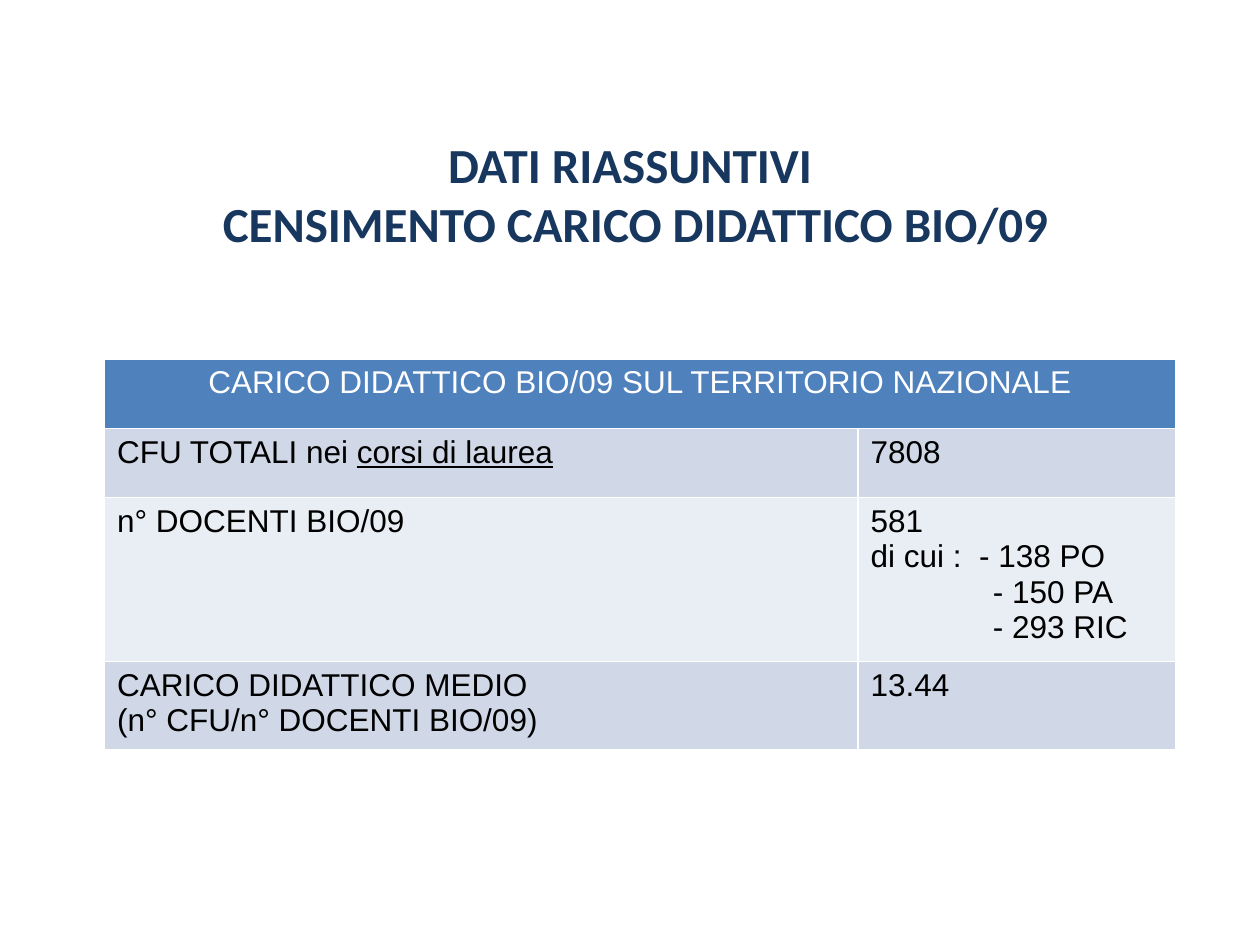
from dataclasses import dataclass

from pptx import Presentation
from pptx.dml.color import RGBColor
from pptx.enum.text import MSO_ANCHOR as Anchor, PP_ALIGN as Align
from pptx.oxml.ns import qn
from pptx.slide import Slide
from pptx.table import _Cell as Cell
from pptx.util import Inches, Pt


@dataclass(frozen=True)
class Theme:
    title_font: str = "Calibri"
    body_font: str = "Arial"
    title_size: int = 28
    body_size: int = 18
    navy: str = "17375E"
    header: str = "4F81BD"
    bands: tuple[str, str] = ("D0D8E8", "E9EDF4")
    white: str = "FFFFFF"
    black: str = "000000"
    border_width: float = 1


@dataclass(frozen=True)
class Run:
    text: str
    underline: bool = False


@dataclass(frozen=True)
class Line:
    runs: tuple[Run, ...]
    indent: float = 0
    align: Align = Align.LEFT


@dataclass(frozen=True)
class Row:
    height: float
    label: tuple[Line, ...]
    value: tuple[Line, ...]


def line(text: str, indent: float = 0, align: Align = Align.LEFT) -> Line:
    return Line((Run(text),), indent, align)


THEME = Theme()
COLUMN_WIDTHS = (5.98, 2.52)
HEADER_HEIGHT = 0.55
RANK_INDENT = 0.97

TITLE = ("DATI RIASSUNTIVI", " CENSIMENTO CARICO DIDATTICO BIO/09")
HEADER = line("CARICO DIDATTICO BIO/09 SUL TERRITORIO NAZIONALE", align=Align.CENTER)
ROWS = (
    Row(0.55,
        (Line((Run("CFU TOTALI nei "), Run("corsi di laurea", underline=True))),),
        (line("7808"),)),
    Row(1.22,
        (line("n° DOCENTI BIO/09"),),
        (line("581"), line("di cui :  - 138 PO"),
         line("- 150 PA", RANK_INDENT), line("- 293 RIC", RANK_INDENT))),
    Row(0.68,
        (line("CARICO DIDATTICO MEDIO"), line("(n° CFU/n° DOCENTI BIO/09)")),
        (line("13.44"),)),
)


def set_borders(cell: Cell) -> None:
    """Draw the four cell borders; they must come before the fill in the XML."""
    properties = cell._tc.get_or_add_tcPr()
    for index, side in enumerate(("a:lnL", "a:lnR", "a:lnT", "a:lnB")):
        border = properties.makeelement(qn(side), {"w": str(Pt(THEME.border_width))})
        fill = border.makeelement(qn("a:solidFill"), {})
        fill.append(fill.makeelement(qn("a:srgbClr"), {"val": THEME.white}))
        border.append(fill)
        properties.insert(index, border)


def fill_cell(cell: Cell, lines: tuple[Line, ...], fill: str, color: str) -> None:
    cell.fill.solid()
    cell.fill.fore_color.rgb = RGBColor.from_string(fill)
    set_borders(cell)
    frame = cell.text_frame
    for index, content in enumerate(lines):
        paragraph = frame.add_paragraph() if index else frame.paragraphs[0]
        paragraph.alignment = content.align
        if content.indent:
            paragraph._p.get_or_add_pPr().set("marL", str(Inches(content.indent)))
        for part in content.runs:
            run = paragraph.add_run()
            run.text = part.text
            font = run.font
            font.name, font.size = THEME.body_font, Pt(THEME.body_size)
            font.bold, font.underline = False, part.underline
            font.color.rgb = RGBColor.from_string(color)


def add_title(slide: Slide) -> None:
    shape = slide.shapes.add_textbox(Inches(0.75), Inches(0.73), Inches(8.5), Inches(1.61))
    frame = shape.text_frame
    frame.word_wrap = True
    frame.vertical_anchor = Anchor.MIDDLE
    paragraph = frame.paragraphs[0]
    paragraph.alignment = Align.CENTER
    for index, text in enumerate(TITLE):
        if index:
            paragraph.add_line_break()
        run = paragraph.add_run()
        run.text = text
        font = run.font
        font.name, font.size, font.bold = THEME.title_font, Pt(THEME.title_size), True
        font.color.rgb = RGBColor.from_string(THEME.navy)


def add_summary_table(slide: Slide) -> None:
    heights = (HEADER_HEIGHT, *(row.height for row in ROWS))
    table = slide.shapes.add_table(
        len(heights), len(COLUMN_WIDTHS), Inches(0.83), Inches(2.85),
        Inches(sum(COLUMN_WIDTHS)), Inches(sum(heights))).table
    for column, width in zip(table.columns, COLUMN_WIDTHS):
        column.width = Inches(width)
    for table_row, height in zip(table.rows, heights):
        table_row.height = Inches(height)

    # Header across both columns
    table.cell(0, 0).merge(table.cell(0, 1))
    fill_cell(table.cell(0, 0), (HEADER,), THEME.header, THEME.white)
    fill_cell(table.cell(0, 1), (), THEME.header, THEME.white)

    # Banded body rows
    for index, row in enumerate(ROWS):
        band = THEME.bands[index % len(THEME.bands)]
        for column, lines in enumerate((row.label, row.value)):
            fill_cell(table.cell(index + 1, column), lines, band, THEME.black)


def main() -> None:
    presentation = Presentation()
    presentation.slide_width, presentation.slide_height = Inches(10), Inches(7.5)
    slide = presentation.slides.add_slide(presentation.slide_layouts[6])
    add_title(slide)
    add_summary_table(slide)
    presentation.save("out.pptx")


if __name__ == "__main__":
    main()
